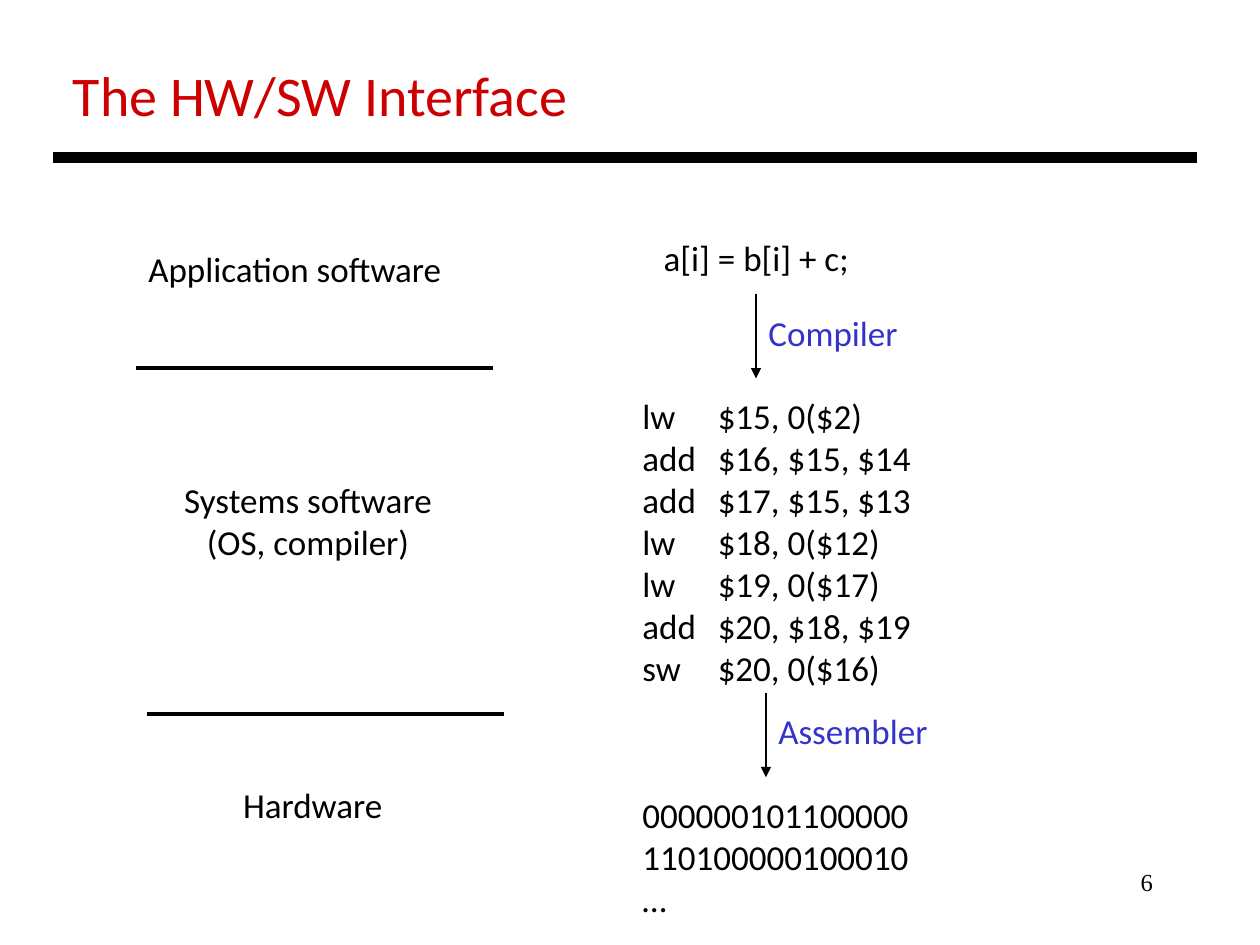
from lxml.etree import SubElement
from pptx import Presentation
from pptx.dml.color import RGBColor
from pptx.enum.shapes import MSO_CONNECTOR as Connector
from pptx.enum.text import PP_ALIGN as Align
from pptx.oxml.ns import qn
from pptx.util import Cm, Pt

BLACK = RGBColor(0x00, 0x00, 0x00)
RED = RGBColor(0xCC, 0x00, 0x00)
BLUE = RGBColor(0x33, 0x33, 0xCC)

presentation = Presentation()
presentation.slide_width, presentation.slide_height = Cm(25.4), Cm(19.05)
slide = presentation.slides.add_slide(presentation.slide_layouts[6])


def add_text(box, lines, color=BLACK, align=Align.LEFT, size=20, name="Calibri", wrap=False):
    shape = slide.shapes.add_textbox(*[Cm(length) for length in box])
    shape.text_frame.word_wrap = wrap
    shape.text_frame.text = "\n".join(lines)
    for paragraph in shape.text_frame.paragraphs:
        paragraph.alignment = align
        for key, value in {"size": Pt(size), "name": name}.items():
            setattr(paragraph.font, key, value)
        paragraph.font.color.rgb = color
    return shape


def add_line(x1, y1, x2, y2, width, arrow=False):
    line = slide.shapes.add_connector(Connector.STRAIGHT, Cm(x1), Cm(y1), Cm(x2), Cm(y2))
    line.line.color.rgb = BLACK
    line.line.width = Pt(width)
    if arrow:
        SubElement(line.line._get_or_add_ln(), qn("a:tailEnd"), type="triangle")
    SubElement(line._element.spPr, qn("a:effectLst"))


# Title, rule and page number
add_text((1.22, 1.09, 10.59, 1.63), ["The HW/SW Interface"], RED, size=32)
add_line(1.07, 3.18, 24.13, 3.18, 6)
add_text((18.21, 17.35, 5.28, 1.27), ["6"], align=Align.RIGHT, size=14,
         name="Times New Roman", wrap=True)

# Layers on the left, with their dividers
add_text((2.74, 4.87, 6.5, 1.12), ["Application software"])
add_text((3.43, 9.53, 5.56, 1.96), ["Systems software", "(OS, compiler)"], align=Align.CENTER)
add_text((4.65, 15.67, 3.35, 1.12), ["Hardware"])
for left, top in [(2.74, 7.42), (2.97, 14.4)]:
    add_line(left, top, left + 7.2, top, 2.25)

# Source statement
add_text((13.13, 4.65, 4.29, 1.12), ["a[i] = b[i] + c;"])

# Assembly code: operands aligned at a tab stop
instructions = [
    ("lw", "$15, 0($2)"),
    ("add", "$16, $15, $14"),
    ("add", "$17, $15, $13"),
    ("lw", "$18, 0($12)"),
    ("lw", "$19, 0($17)"),
    ("add", "$20, $18, $19"),
    ("sw", "$20, 0($16)"),
]
assembly = add_text((12.7, 7.82, 6.02, 6.25), ["\t".join(pair) for pair in instructions])
for paragraph in assembly.text_frame.paragraphs:
    tab_stops = SubElement(paragraph._p.get_or_add_pPr(), qn("a:tabLst"))
    SubElement(tab_stops, qn("a:tab"), pos=str(Cm(1.52)), algn="l")
    # The tab list precedes the default run properties
    properties = paragraph._p.pPr
    properties.insert(0, tab_stops)

# Machine code
add_text((12.7, 15.88, 5.92, 2.82), ["000000101100000", "110100000100010", "…"])

# Translation steps
for label, x, y, label_top, label_width in [
    ("Compiler", 15.24, 5.93, 6.15, 3.15),
    ("Assembler", 15.44, 13.97, 14.17, 3.56),
]:
    add_line(x, y, x, y + 1.7, 0.75, arrow=True)
    add_text((x, label_top, label_width, 1.12), [label], BLUE)

presentation.save("out.pptx")
